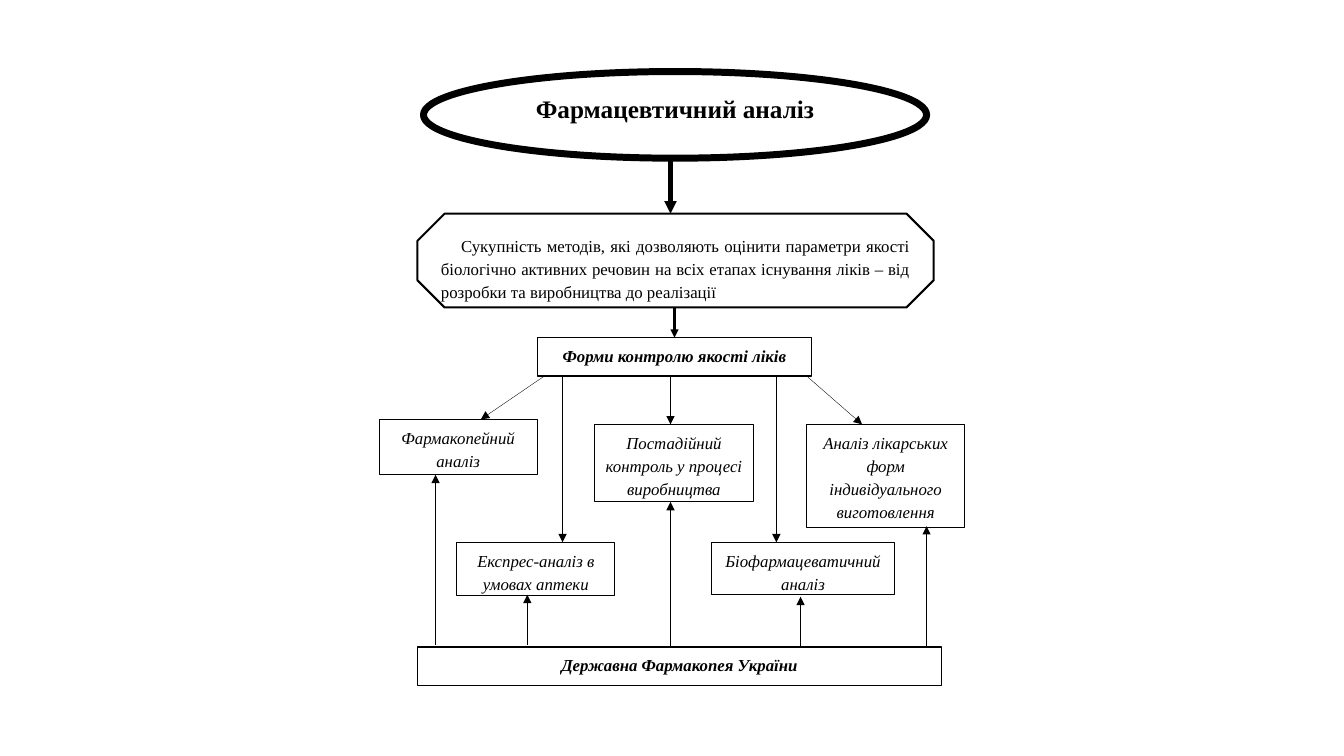
"""Build a flowchart slide on the forms of pharmaceutical quality control."""
import pptx
import pptx.dml.color
import pptx.enum.shapes
import pptx.enum.text
import pptx.oxml
import pptx.oxml.ns
import pptx.util

PX = 9144
SHAPES = pptx.enum.shapes.MSO_SHAPE
ALIGN = pptx.enum.text.PP_ALIGN
THEME = {
    "ink": pptx.dml.color.RGBColor(0, 0, 0),
    "paper": pptx.dml.color.RGBColor(255, 255, 255),
    "font": "Times New Roman",
    "title": 18,
    "body": 12,
}
TITLE = {"size": pptx.util.Pt(THEME["title"]), "bold": True}
BODY = {"size": pptx.util.Pt(THEME["body"])}
FORM = {**BODY, "italic": True}
HEADING = {**FORM, "bold": True}


def add_box(kind, bounds, line_width, text, font_format, alignment=ALIGN.CENTER):
    shape = slide.shapes.add_shape(kind, *(value * PX for value in bounds))
    shape.shadow.inherit = False
    shape.fill.solid()
    shape.fill.fore_color.rgb = THEME["paper"]
    shape.line.color.rgb = THEME["ink"]
    shape.line.width = pptx.util.Pt(line_width)
    frame = shape.text_frame
    frame.word_wrap = True
    frame.vertical_anchor = pptx.enum.text.MSO_ANCHOR.TOP
    paragraph = frame.paragraphs[0]
    paragraph.alignment = alignment
    paragraph.line_spacing = 1.15
    run = paragraph.add_run()
    run.text = text
    run.font.name = THEME["font"]
    run.font.color.rgb = THEME["ink"]
    for attribute, value in font_format.items():
        setattr(run.font, attribute, value)
    return shape


def add_arrow(start_x, start_y, end_x, end_y, line_width=0.25):
    arrow = slide.shapes.add_connector(
        pptx.enum.shapes.MSO_CONNECTOR.STRAIGHT,
        start_x * PX, start_y * PX, end_x * PX, end_y * PX)
    arrow.line.color.rgb = THEME["ink"]
    arrow.line.width = pptx.util.Pt(line_width)
    namespace = pptx.oxml.ns.nsdecls("a")
    arrow.line._get_or_add_ln().append(
        pptx.oxml.parse_xml(f'<a:tailEnd {namespace} type="triangle"/>'))
    arrow._element.spPr.append(pptx.oxml.parse_xml(f"<a:effectLst {namespace}/>"))
    return arrow


presentation = pptx.Presentation()
presentation.slide_width = 1333 * PX
presentation.slide_height = 750 * PX
slide = presentation.slides.add_slide(presentation.slide_layouts[6])

add_box(SHAPES.OVAL, (420, 71, 499, 86), 5, "Фармацевтичний аналіз", TITLE)

definition = add_box(
    SHAPES.OCTAGON, (414, 212, 512, 93), 1.5,
    "Сукупність методів, які дозволяють оцінити параметри якості біологічно "
    "активних речовин на всіх етапах існування ліків – від розробки та "
    "виробництва до реалізації", BODY, ALIGN.JUSTIFY)
definition.adjustments[0] = 0.29
definition.text_frame.paragraphs[0]._p.get_or_add_pPr().set("indent", str(20 * PX))

control = add_box(SHAPES.RECTANGLE, (533, 335, 272, 38), 1,
                  "Форми контролю якості ліків", HEADING)
add_box(SHAPES.RECTANGLE, (414, 642, 520, 38), 1,
        "Державна Фармакопея України", HEADING)

forms = [
    ((376, 416, 157, 55), "Фармакопейний аналіз"),
    ((590, 421, 157, 77), "Постадійний контроль у процесі виробництва"),
    ((800, 421, 157, 102), "Аналіз лікарських форм індивідуального виготовлення"),
    ((453, 538, 157, 53), "Експрес-аналіз в умовах аптеки"),
    ((706, 538, 181, 52), "Біофармацеватичний аналіз"),
]
for bounds, text in forms:
    add_box(SHAPES.RECTANGLE, bounds, 0.75, text, FORM)

add_arrow(665, 157, 665, 212, 3)
add_arrow(669, 305, 669, 335, 1.5).end_connect(control, 0)

for start_x, end_x, end_y in [(540, 477, 416), (558, 558, 538), (665, 665, 421),
                              (770, 770, 538), (800, 855, 421)]:
    add_arrow(start_x, 373, end_x, end_y)

for x, start_y, end_y in [(432, 640, 471), (523, 640, 590), (665, 642, 498),
                          (794, 642, 592), (919, 642, 522)]:
    add_arrow(x, start_y, x, end_y)

presentation.save("out.pptx")
